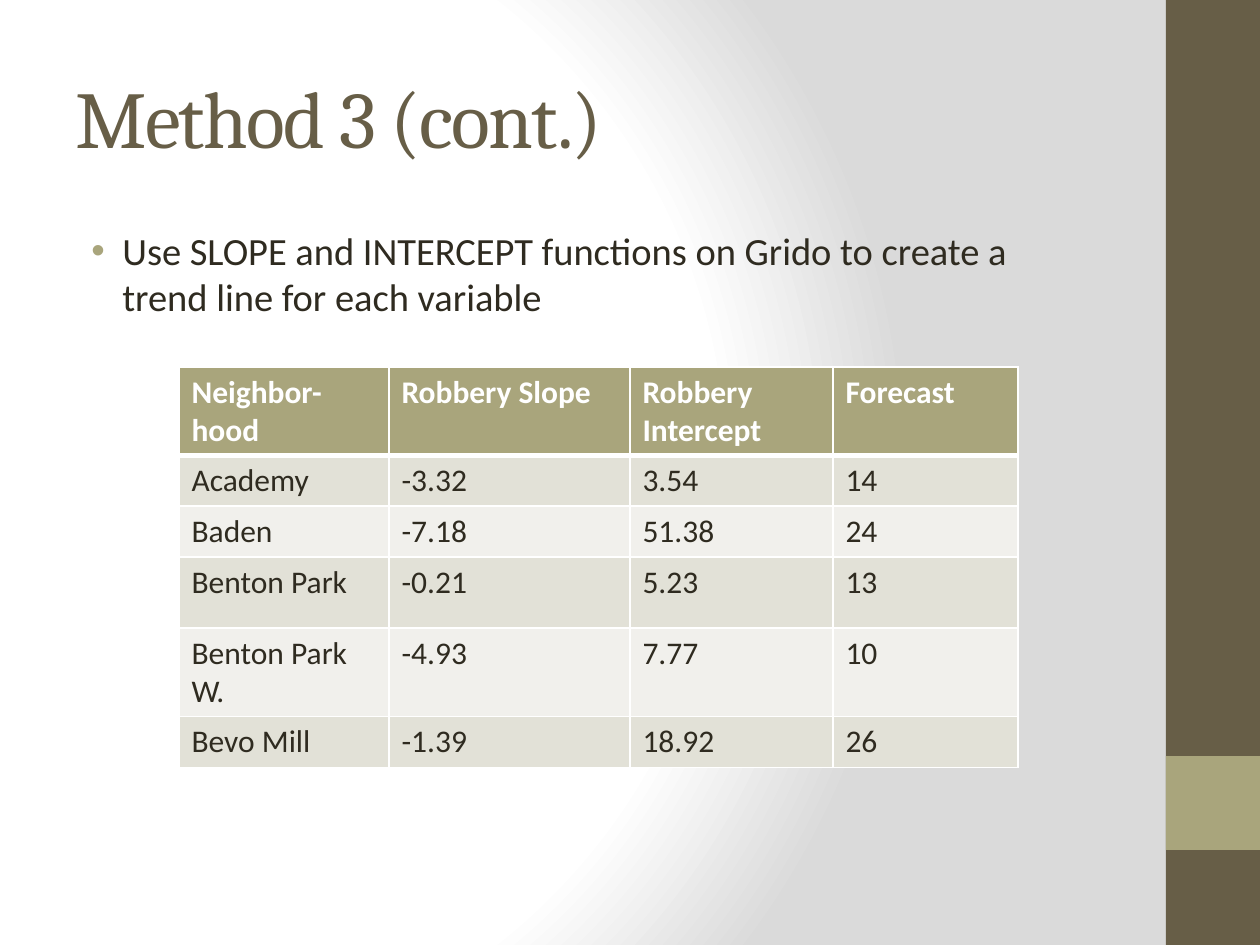
from pptx import Presentation, util as u
from pptx.dml.color import RGBColor
from pptx.enum import shapes, text
from pptx.oxml import parse_xml
from pptx.oxml.ns import nsdecls, qn

TITLE = "Method 3 (cont.)"
BULLET = ("Use SLOPE and INTERCEPT functions on Grido "
          "to create a trend line for each variable")
ROWS = [
    ("Neighbor-hood", "Robbery Slope", "Robbery Intercept", "Forecast"),
    ("Academy", "-3.32", "3.54", "14"),
    ("Baden", "-7.18", "51.38", "24"),
    ("Benton Park", "-0.21", "5.23", "13"),
    ("Benton Park W.", "-4.93", "7.77", "10"),
    ("Bevo Mill", "-1.39", "18.92", "26"),
]
COLUMN_WIDTHS = [210, 241, 203, 185]
ROW_HEIGHTS = [78, 51, 51, 71, 78, 51]
BROWN, OLIVE, INK, WHITE = "675E47", "A9A57C", "2F2B20", "FFFFFF"
BANDS = ["F1F0EC", "E2E1D7"]
SIDE_PANELS = [(1166, 0, 94, 945, BROWN), (1166, 756, 94, 94, OLIVE)]
GRADIENT = [(0, WHITE), (75, WHITE), (100, "DADADA")]


def px(length):
    return u.Inches(length / 126)


def paint(fill, color):
    fill.solid()
    fill.fore_color.rgb = RGBColor.from_string(color)


def style(para, font, size, color, bold=False):
    for span in para.runs:
        span.font.name = font
        span.font.size = u.Pt(size)
        span.font.bold = bold
        span.font.color.rgb = RGBColor.from_string(color)


def set_background(page):
    page.background.fill.solid()
    properties = page.element.find(".//" + qn("p:bgPr"))
    stops = "".join(f'<a:gs pos="{at * 1000}"><a:srgbClr val="{color}"/></a:gs>'
                    for at, color in GRADIENT)
    properties.replace(properties[0], parse_xml(
        f'<a:gradFill {nsdecls("a")} rotWithShape="1"><a:gsLst>{stops}</a:gsLst>'
        '<a:path path="circle"><a:fillToRect l="20000" t="50000" r="100000" b="50000"/>'
        '</a:path></a:gradFill>'))


def add_panels(page):
    for left, top, width, height, color in SIDE_PANELS:
        panel = page.shapes.add_shape(shapes.MSO_SHAPE.RECTANGLE,
                                      px(left), px(top), px(width), px(height))
        panel.shadow.inherit = False
        panel.line.fill.background()
        paint(panel.fill, color)


def set_title(page):
    title = page.shapes.title
    title.left, title.top, title.width, title.height = map(px, (63, 38, 1050, 157))
    frame = title.text_frame
    frame.text = TITLE
    frame.word_wrap = True
    frame.vertical_anchor = text.MSO_ANCHOR.MIDDLE
    para = frame.paragraphs[0]
    para.alignment = text.PP_ALIGN.LEFT
    style(para, "Cambria", 46, BROWN)
    para.runs[0].font._element.set("spc", "-100")


def add_bullet(page):
    box = page.shapes.add_textbox(*map(px, (63, 221, 1050, 661)))
    frame = box.text_frame
    frame.word_wrap = True
    frame.text = BULLET
    para = frame.paragraphs[0]
    para.space_before = u.Pt(4)
    style(para, "Calibri", 22, INK)
    properties = para._p.get_or_add_pPr()
    properties.set("marL", str(px(47)))
    properties.set("indent", str(-px(31)))
    for item in (f'<a:buClr {nsdecls("a")}><a:srgbClr val="{OLIVE}"/></a:buClr>',
                 f'<a:buFont {nsdecls("a")} typeface="Arial"/>',
                 f'<a:buChar {nsdecls("a")} char="•"/>'):
        properties.append(parse_xml(item))


def set_borders(cell, top, bottom):
    properties = cell._tc.get_or_add_tcPr()
    for index, (side, width) in enumerate(
            [("L", 1), ("R", 1), ("T", top), ("B", bottom)]):
        properties.insert(index, parse_xml(
            f'<a:ln{side} {nsdecls("a")} w="{u.Pt(width)}"><a:solidFill>'
            f'<a:srgbClr val="{WHITE}"/></a:solidFill></a:ln{side}>'))


def add_grid(page):
    grid = page.shapes.add_table(
        len(ROWS), len(COLUMN_WIDTHS), px(179), px(367),
        px(sum(COLUMN_WIDTHS)), px(sum(ROW_HEIGHTS))).table
    for column, width in zip(grid.columns, COLUMN_WIDTHS):
        column.width = px(width)
    for r, (row, height, values) in enumerate(zip(grid.rows, ROW_HEIGHTS, ROWS)):
        row.height = px(height)
        header = r == 0
        for cell, value in zip(row.cells, values):
            cell.text_frame.text = value
            style(cell.text_frame.paragraphs[0], "Calibri", 18,
                  WHITE if header else INK, header)
            paint(cell.fill, OLIVE if header else BANDS[r % 2])
            set_borders(cell, 3 if r == 1 else 1, 3 if header else 1)


def main():
    deck = Presentation()
    deck.slide_width, deck.slide_height = px(1260), px(945)
    page = deck.slides.add_slide(deck.slide_layouts[5])
    set_background(page)
    add_panels(page)
    set_title(page)
    add_bullet(page)
    add_grid(page)
    deck.save("out.pptx")


if __name__ == "__main__":
    main()
